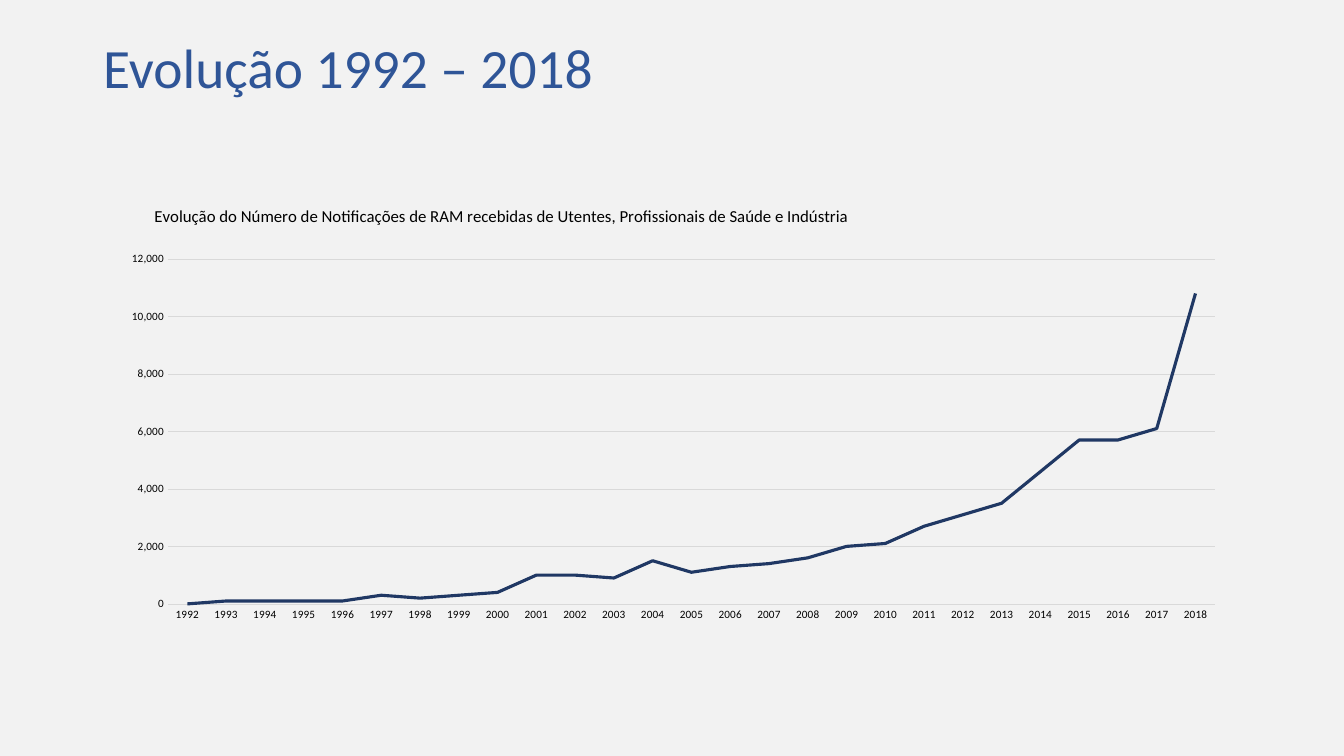
from dataclasses import dataclass

from lxml import etree
from pptx import Presentation
from pptx import util as u
from pptx.chart.data import CategoryChartData
from pptx.dml.color import RGBColor
from pptx.enum import chart as ch, text
from pptx.oxml.ns import qn

EMU_PER_PX = 914400 / 100.8


@dataclass(frozen=True)
class Theme:
    font: str = "Calibri"
    background: str = "F2F2F2"
    heading: str = "2F5597"
    ink: str = "000000"
    line: str = "203864"
    grid: str = "D9D9D9"
    heading_size: float = 39.6
    chart_title_size: int = 12
    chart_size: int = 10
    axis_size: int = 8


THEME = Theme()

YEARS = [str(year) for year in range(1992, 2019)]
REPORTS = [0, 100, 100, 100, 100, 300, 200, 300, 400,
           1000, 1000, 900, 1500, 1100, 1300, 1400, 1600, 2000,
           2100, 2700, 3100, 3500, 4600, 5700, 5700, 6100, 10800]


def px(length):
    return u.Emu(round(length * EMU_PER_PX))


def style_font(font, size, color):
    font.name = THEME.font
    font.size = u.Pt(size)
    font.bold = False
    font.color.rgb = RGBColor.from_string(color)


def set_layout(parent, index, **settings):
    """Give a chart part a manual layout, placed at a child index."""
    for old in parent.findall(qn("c:layout")):
        parent.remove(old)
    layout = etree.Element(qn("c:layout"))
    manual = etree.SubElement(layout, qn("c:manualLayout"))
    for name, value in settings.items():
        etree.SubElement(manual, qn(f"c:{name}")).set("val", str(value))
    parent.insert(index, layout)


def add_title(page, wording, left, top, width, height):
    title = page.shapes.title
    title.left, title.top = px(left), px(top)
    title.width, title.height = px(width), px(height)
    frame = title.text_frame
    frame.text = wording
    frame.word_wrap = True
    frame.auto_size = text.MSO_AUTO_SIZE.NONE
    frame.vertical_anchor = text.MSO_ANCHOR.MIDDLE
    para = frame.paragraphs[0]
    para.alignment = text.PP_ALIGN.LEFT
    para.line_spacing = 0.9
    style_font(para.font, THEME.heading_size, THEME.heading)


def style_axis(axis):
    axis.major_tick_mark = axis.minor_tick_mark = ch.XL_TICK_MARK.NONE
    axis.format.line.fill.background()
    style_font(axis.tick_labels.font, THEME.axis_size, THEME.ink)


def add_line_chart(page, wording, left, top, width, height):
    data = CategoryChartData(number_format="#,##0")
    data.categories = YEARS
    data.add_series("Series 1", REPORTS)
    chart = page.shapes.add_chart(
        ch.XL_CHART_TYPE.LINE, px(left), px(top), px(width), px(height), data
    ).chart
    chart.has_legend = False
    style_font(chart.font, THEME.chart_size, THEME.ink)

    # Chart title
    chart.has_title = True
    para = chart.chart_title.text_frame.paragraphs[0]
    para.text = wording
    style_font(para.font, THEME.chart_title_size, THEME.ink)
    set_layout(chart.chart_title.element, 1,
               xMode="edge", yMode="edge", x=0.03, y=0.05)

    # Axes and gridlines
    style_axis(chart.category_axis)
    values = chart.value_axis
    style_axis(values)
    values.minimum_scale, values.maximum_scale, values.major_unit = 0, 12000, 2000
    values.tick_labels.number_format = "#,##0"
    values.tick_labels.number_format_is_linked = False
    values.has_major_gridlines = True
    grid = values.major_gridlines.format.line
    grid.width = u.Pt(0.5)
    grid.color.rgb = RGBColor.from_string(THEME.grid)

    # Plot and series
    plot = chart.plots[0]
    plot.vary_by_categories = False
    series = plot.series[0]
    series.smooth = False
    series.marker.style = ch.XL_MARKER_STYLE.NONE
    series.format.line.width = u.Pt(2.25)
    series.format.line.color.rgb = RGBColor.from_string(THEME.line)
    plot_area = values.major_gridlines.format.line and chart.element.find(
        f".//{qn('c:plotArea')}")
    set_layout(plot_area, 0, layoutTarget="inner", xMode="edge", yMode="edge",
               x=50 / width, y=81 / height, w=1047 / width, h=345 / height)


def main():
    deck = Presentation()
    deck.slide_width, deck.slide_height = px(1344), px(756)
    page = deck.slides.add_slide(deck.slide_layouts[5])
    fill = page.background.fill
    fill.solid()
    fill.fore_color.rgb = RGBColor.from_string(THEME.background)

    add_title(page, "Evolução 1992 – 2018", 93, 40, 655, 62)
    add_line_chart(
        page,
        "Evolução do Número de Notificações de RAM recebidas de Utentes, "
        "Profissionais de Saúde e Indústria",
        118, 178, 1113, 479)
    deck.save("out.pptx")


if __name__ == "__main__":
    main()
